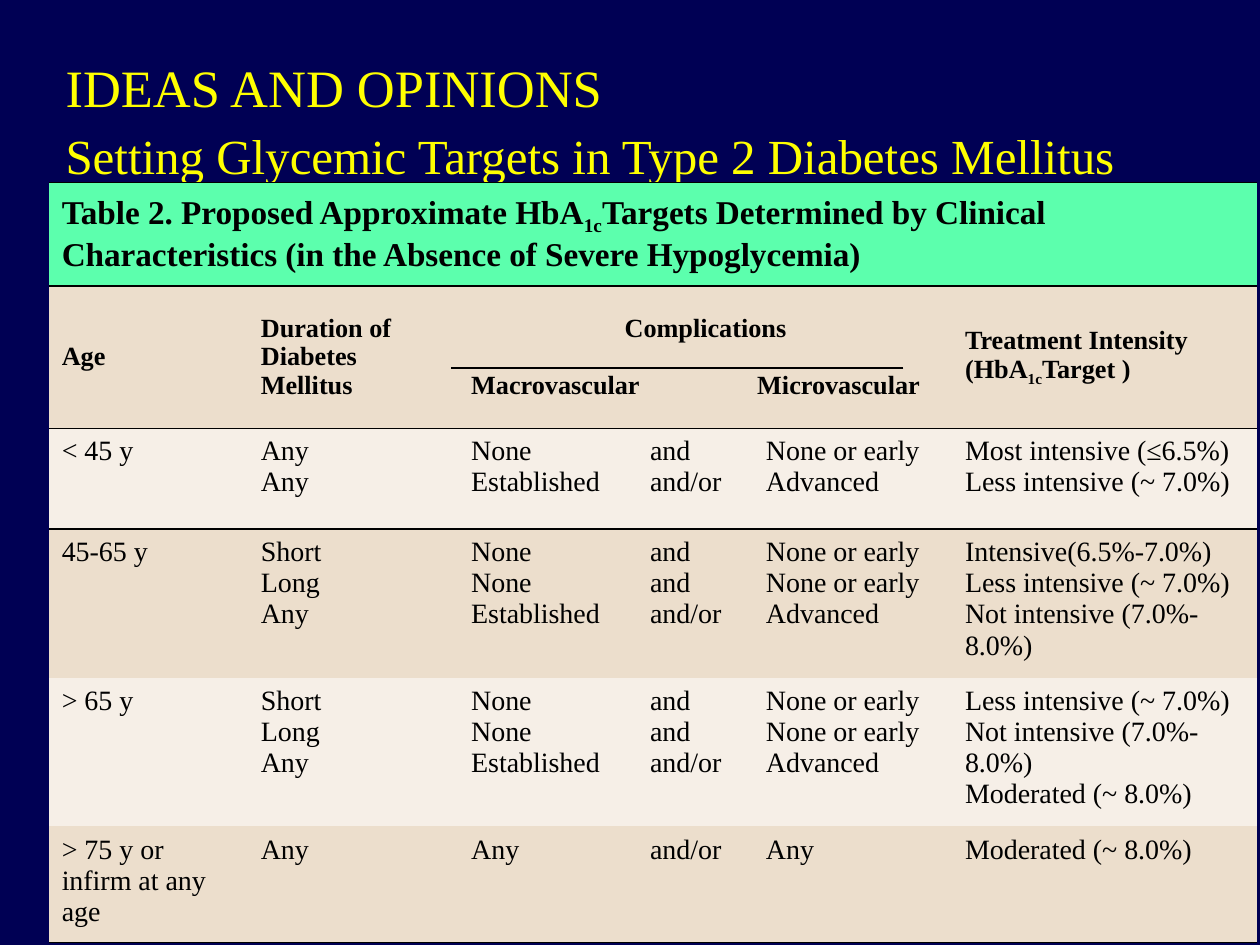
from lxml import etree
from pptx import Presentation
from pptx import util as u
from pptx.dml import color
from pptx.enum import shapes, text
from pptx.oxml import ns

FONT = "Times New Roman"
BLACK = "000000"
NAVY = "000054"
YELLOW = "FFFF00"
GREEN = "5CFFAD"
TAN = "ECDECC"
CREAM = "F6EFE7"
NO_STYLE = "{2D5ABB26-0587-4C30-8999-92F81FD0307C}"

COLUMN_WIDTHS = [1.58, 1.67, 1.42, 0.92, 1.58, 2.42]
ROW_HEIGHTS = [0.82, 1.13, 0.8, 1.18, 1.18, 0.92]
CAPTION = (
    "Table 2. Proposed Approximate HbA1cTargets Determined by Clinical "
    "Characteristics (in the Absence of Severe Hypoglycemia)"
)
HEADINGS = {
    0: ["Age"],
    1: ["Duration of Diabetes Mellitus"],
    2: ["Complications", "Macrovascular\tMicrovascular"],
    5: ["Treatment Intensity", "(HbA1cTarget )"],
}
AGE_GROUPS = [
    ("< 45 y", [
        ("Any", "None", "and", "None or early", "Most intensive (≤6.5%)"),
        ("Any", "Established", "and/or", "Advanced", "Less intensive (~ 7.0%)"),
    ]),
    ("45-65 y", [
        ("Short", "None", "and", "None or early", "Intensive(6.5%-7.0%)"),
        ("Long", "None", "and", "None or early", "Less intensive (~ 7.0%)"),
        ("Any", "Established", "and/or", "Advanced", "Not intensive (7.0%-8.0%)"),
    ]),
    ("> 65 y", [
        ("Short", "None", "and", "None or early", "Less intensive (~ 7.0%)"),
        ("Long", "None", "and", "None or early", "Not intensive (7.0%-8.0%)"),
        ("Any", "Established", "and/or", "Advanced", "Moderated (~ 8.0%)"),
    ]),
    ("> 75 y or infirm at any age", [
        ("Any", "Any", "and/or", "Any", "Moderated (~ 8.0%)"),
    ]),
]


def rgb(value):
    return color.RGBColor.from_string(value)


def place(shape, left, top, width, height):
    shape.left, shape.top = u.Inches(left), u.Inches(top)
    shape.width, shape.height = u.Inches(width), u.Inches(height)


def style_paragraph(paragraph, size, bold, hex_color=BLACK):
    font = paragraph.font
    font.name, font.size, font.bold = FONT, u.Pt(size), bold
    font.color.rgb = rgb(hex_color)


def add_text_with_subscript(paragraph, content, subscript="1c"):
    for part in content.partition(subscript):
        if part:
            run = paragraph.add_run()
            run.text = part
            if part == subscript:
                run.font._element.set("baseline", "-25000")


def add_border(cell, edge):
    properties = cell._tc.get_or_add_tcPr()
    line = etree.SubElement(properties, ns.qn(f"a:{edge}"), w=str(u.Pt(1)))
    fill = etree.SubElement(line, ns.qn("a:solidFill"))
    etree.SubElement(fill, ns.qn("a:srgbClr"), val=BLACK)


def fill_cell(cell, lines, size, bold=False, anchor=text.MSO_ANCHOR.TOP):
    cell.vertical_anchor = anchor
    frame = cell.text_frame
    for index, content in enumerate(lines):
        paragraph = frame.add_paragraph() if index else frame.paragraphs[0]
        add_text_with_subscript(paragraph, content)
        style_paragraph(paragraph, size, bold)


def format_complications(cell):
    heading, subheadings = cell.text_frame.paragraphs
    heading.alignment = text.PP_ALIGN.CENTER
    properties = subheadings._p.get_or_add_pPr()
    tabs = etree.Element(ns.qn("a:tabLst"))
    etree.SubElement(tabs, ns.qn("a:tab"), pos=str(u.Inches(2.27)), algn="l")
    properties.insert(0, tabs)
    subheadings.space_before = u.Pt(16.5)


def paint_rows(table):
    fills = [GREEN, TAN, CREAM, TAN, CREAM, TAN]
    top_ruled = {0, 1, 2}
    bottom_ruled = {0, 1, len(fills) - 1}
    for index, (row, fill) in enumerate(zip(table.rows, fills)):
        row.height = u.Inches(ROW_HEIGHTS[index])
        for cell in row.cells:
            if index in top_ruled:
                add_border(cell, "lnT")
            if index in bottom_ruled:
                add_border(cell, "lnB")
            cell.fill.solid()
            cell.fill.fore_color.rgb = rgb(fill)
            cell.margin_left = cell.margin_right = u.Inches(0.1)
            cell.margin_top = cell.margin_bottom = u.Inches(0.06)


def add_targets_table(slide, left, top, width, height):
    frame = slide.shapes.add_table(
        len(ROW_HEIGHTS), len(COLUMN_WIDTHS),
        u.Inches(left), u.Inches(top), u.Inches(width), u.Inches(height),
    )
    table = frame.table
    next(frame._element.iter(ns.qn("a:tableStyleId"))).text = NO_STYLE
    for column, column_width in zip(table.columns, COLUMN_WIDTHS):
        column.width = u.Inches(column_width)
    paint_rows(table)

    table.cell(0, 0).merge(table.cell(0, 5))
    table.cell(1, 2).merge(table.cell(1, 4))
    middle = text.MSO_ANCHOR.MIDDLE
    fill_cell(table.cell(0, 0), [CAPTION], 19, True, middle)
    for column, lines in HEADINGS.items():
        fill_cell(table.cell(1, column), lines, 15, True, middle)
    format_complications(table.cell(1, 2))

    for row, (age, cases) in enumerate(AGE_GROUPS, start=2):
        for column, lines in enumerate([[age], *zip(*cases)]):
            fill_cell(table.cell(row, column), lines, 16)


def add_complications_rule(slide, left, top, width):
    rule = slide.shapes.add_connector(
        shapes.MSO_CONNECTOR.STRAIGHT,
        u.Inches(left + width), u.Inches(top), u.Inches(left), u.Inches(top),
    )
    rule.line.color.rgb = rgb(BLACK)
    rule.line.width = u.Pt(0.75)
    etree.SubElement(rule._element.spPr, ns.qn("a:effectLst"))


def add_title(slide, left, top, width, height):
    title = slide.shapes.title
    place(title, left, top, width, height)
    frame = title.text_frame
    frame.word_wrap = True
    frame.auto_size = text.MSO_AUTO_SIZE.NONE
    frame.vertical_anchor = text.MSO_ANCHOR.TOP
    paragraph = frame.paragraphs[0]
    paragraph.alignment = text.PP_ALIGN.LEFT
    paragraph.line_spacing = 1.12
    heading = paragraph.add_run()
    heading.text = "IDEAS AND OPINIONS"
    heading.font.size = u.Pt(30)
    paragraph.add_line_break()
    subject = paragraph.add_run()
    subject.text = "Setting Glycemic Targets in Type 2 Diabetes Mellitus"
    subject.font.size = u.Pt(28)
    style_paragraph(paragraph, 28, False, YELLOW)


def main():
    presentation = Presentation()
    presentation.slide_width = u.Inches(10)
    presentation.slide_height = u.Inches(7.5)
    slide = presentation.slides.add_slide(presentation.slide_layouts[5])
    slide.background.fill.solid()
    slide.background.fill.fore_color.rgb = rgb(NAVY)
    add_title(slide, 0.42, 0.33, 9, 1.25)
    add_targets_table(slide, 0.39, 1.45, 9.59, 6.03)
    add_complications_rule(slide, 3.58, 2.92, 3.59)
    presentation.save("out.pptx")


if __name__ == "__main__":
    main()
